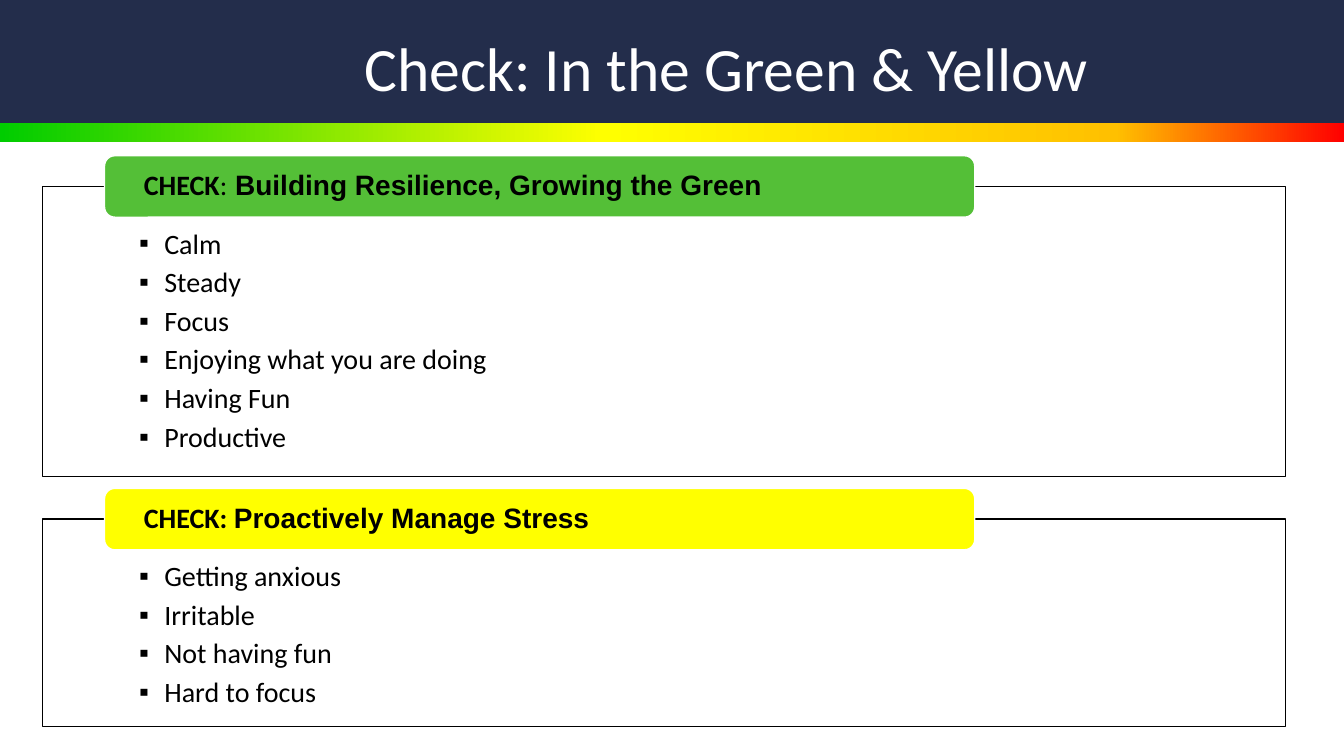
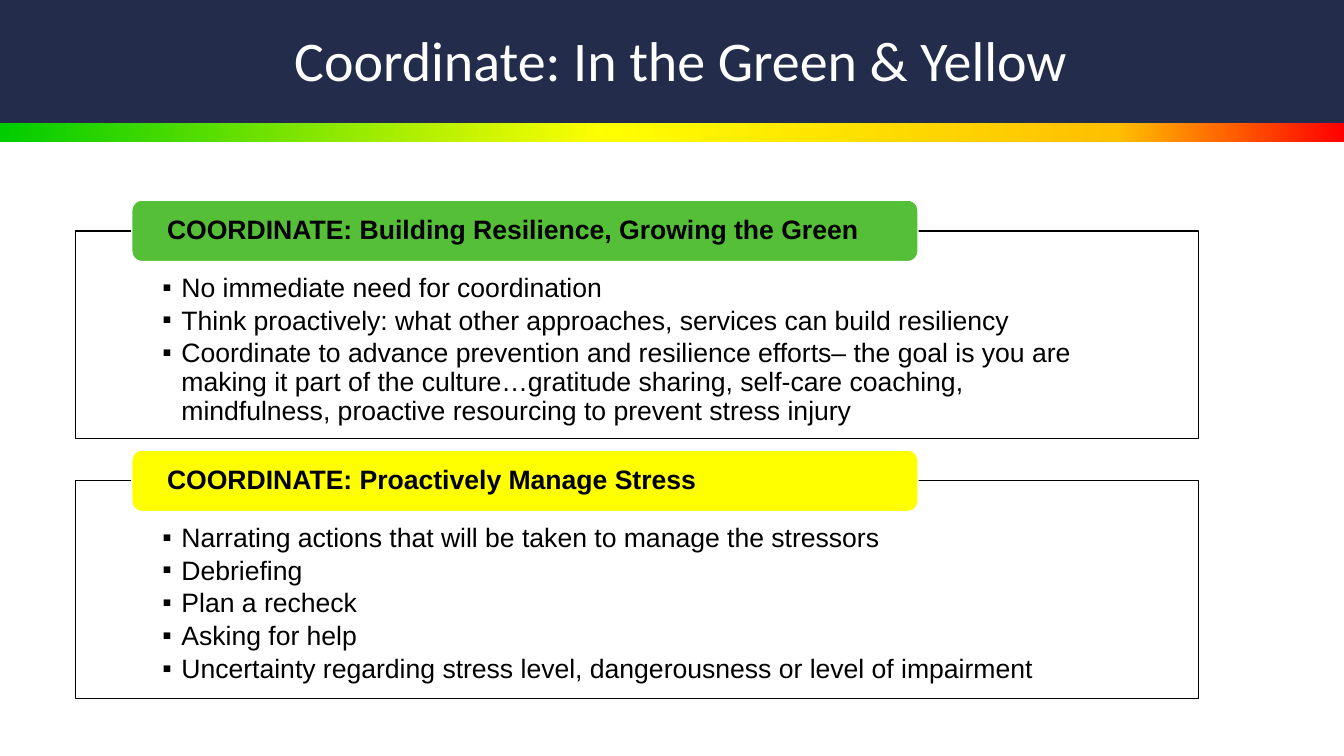
"""Build two slides on checking and coordinating in the green and yellow zones."""
from lxml import etree
from pptx import Presentation
from pptx.dml.color import RGBColor
from pptx.enum.shapes import MSO_SHAPE
from pptx.enum.text import MSO_ANCHOR, PP_ALIGN
from pptx.oxml.ns import qn
from pptx.util import Inches, Pt

RECTANGLE = MSO_SHAPE.RECTANGLE
ROUNDED = MSO_SHAPE.ROUNDED_RECTANGLE
LEFT = PP_ALIGN.LEFT
TOP, MIDDLE = MSO_ANCHOR.TOP, MSO_ANCHOR.MIDDLE

WIDTH = 13.33
HEADER_HEIGHT = 1.22
LABEL_HEIGHT = 0.61
LINE_SPACING = 0.9
NAVY, WHITE, BLACK = "232D4B", "FFFFFF", "000000"
GREEN, YELLOW = "54BF37", "FFFF00"
ZONE_STOPS = [(0, "00CC00"), (45, "FFFF00"), (83, "FFC000"), (100, "FF0000")]

SLIDES = [
    {
        "title": "Check: In the Green & Yellow",
        "title_box": (3.52, 0.16, 8.36, 1.1), "title_size": 44,
        "left": 0.42, "width": 12.33, "text_inset": 0.96, "label_inset": 0.36,
        "font": "Calibri", "size": 20, "indent": 0.25, "space_after": 6,
        "panels": [
            (1.85, 2.88, GREEN,
             [("CHECK", "Calibri", True), (":", "Calibri", False),
              (" Building Resilience, Growing the Green", "Arial", True)],
             ["Calm", "Steady", "Focus", "Enjoying what you are doing",
              "Having Fun", "Productive"]),
            (5.15, 2.06, YELLOW,
             [("CHECK: ", "Calibri", True),
              ("Proactively Manage Stress", "Arial", True)],
             ["Getting anxious", "Irritable", "Not having fun", "Hard to focus"]),
        ],
    },
    {
        "title": "Coordinate: In the Green & Yellow",
        "title_box": (2.82, 0.08, 8.63, 1.1), "title_size": 40,
        "left": 0.75, "width": 11.14, "text_inset": 0.86, "label_inset": 0.32,
        "font": "Arial", "size": 19, "indent": 0.19, "space_after": 3,
        "panels": [
            (2.29, 2.06, GREEN,
             [("COORDINATE: Building Resilience, Growing the Green", "Arial", True)],
             ["No immediate need for coordination",
              "Think proactively: what other approaches, services can build resiliency",
              "Coordinate to advance prevention and resilience efforts– the goal is "
              "you are making it part of the culture…gratitude sharing, self-care "
              "coaching, mindfulness, proactive resourcing to prevent stress injury"]),
            (4.77, 2.16, YELLOW,
             [("COORDINATE: Proactively Manage Stress", "Arial", True)],
             ["Narrating actions that will be taken to manage the stressors",
              "Debriefing", "Plan a recheck", "Asking for help",
              "Uncertainty regarding stress level, dangerousness or level of impairment"]),
        ],
    },
]


def color(hex_string):
    """Turn a hex string into a colour."""
    return RGBColor.from_string(hex_string)


def add_block(slide, kind, box, fill, line=None, inset=0.1, anchor=MIDDLE):
    """Add a filled shape that is ready for left-aligned text."""
    shape = slide.shapes.add_shape(kind, *[Inches(value) for value in box])
    shape.shadow.inherit = False
    shape.fill.solid()
    shape.fill.fore_color.rgb = color(fill)
    if line:
        shape.line.color.rgb = color(line)
        shape.line.width = Pt(1)
    else:
        shape.line.fill.background()
    text_frame = shape.text_frame
    text_frame.word_wrap = True
    text_frame.vertical_anchor = anchor
    text_frame.margin_left = text_frame.margin_right = Inches(inset)
    text_frame.margin_top = text_frame.margin_bottom = 0
    return shape


presentation = Presentation()
presentation.slide_width = Inches(WIDTH)
presentation.slide_height = Inches(7.5)

for content in SLIDES:
    slide = presentation.slides.add_slide(presentation.slide_layouts[6])

    zone_band = add_block(slide, RECTANGLE, (0, HEADER_HEIGHT, WIDTH, 0.19), WHITE)
    zone_band.fill.gradient()
    zone_band.fill.gradient_angle = 0
    stop_list = next(zone_band.element.iter(qn("a:gsLst")))
    for stop in list(stop_list):
        stop_list.remove(stop)
    for position, stop_color in ZONE_STOPS:
        stop = etree.SubElement(stop_list, qn("a:gs"), pos=str(position * 1000))
        etree.SubElement(stop, qn("a:srgbClr"), val=stop_color)
    add_block(slide, RECTANGLE, (0, 0, WIDTH, HEADER_HEIGHT), NAVY)

    title = slide.shapes.add_textbox(*[Inches(value) for value in content["title_box"]])
    title.text_frame.word_wrap = True
    title.text_frame.vertical_anchor = MIDDLE
    title.text_frame.text = content["title"]
    paragraph = title.text_frame.paragraphs[0]
    paragraph.line_spacing = LINE_SPACING
    paragraph.font.name = "Calibri"
    paragraph.font.size = Pt(content["title_size"])
    paragraph.font.color.rgb = color(WHITE)

    left, width = content["left"], content["width"]
    for top, height, label_color, label_runs, bullets in content["panels"]:
        panel = add_block(slide, RECTANGLE, (left, top, width, height), WHITE,
                          BLACK, content["text_inset"], TOP)
        panel.text_frame.margin_top = Inches(0.43)
        panel.text_frame.text = "\n".join(bullets)
        for paragraph in panel.text_frame.paragraphs:
            paragraph.alignment = LEFT
            paragraph.line_spacing = LINE_SPACING
            paragraph.space_after = Pt(content["space_after"])
            properties = paragraph._p.get_or_add_pPr()
            properties.set("marL", str(Inches(content["indent"])))
            properties.set("indent", str(-Inches(content["indent"])))
            etree.SubElement(properties, qn("a:buFont"), typeface="Arial")
            etree.SubElement(properties, qn("a:buChar"), char="▪")
            paragraph.font.name = content["font"]
            paragraph.font.size = Pt(content["size"])
            paragraph.font.color.rgb = color(BLACK)

        label_box = (left + 0.05 * width, top - LABEL_HEIGHT / 2,
                     0.7 * width, LABEL_HEIGHT)
        label = add_block(slide, ROUNDED, label_box, label_color, WHITE,
                          content["label_inset"])
        paragraph = label.text_frame.paragraphs[0]
        paragraph.alignment = LEFT
        paragraph.line_spacing = LINE_SPACING
        for text, font_name, bold in label_runs:
            run = paragraph.add_run()
            run.text = text
            run.font.name = font_name
            run.font.bold = bold
            run.font.size = Pt(content["size"])
            run.font.color.rgb = color(BLACK)

presentation.save("out.pptx")
